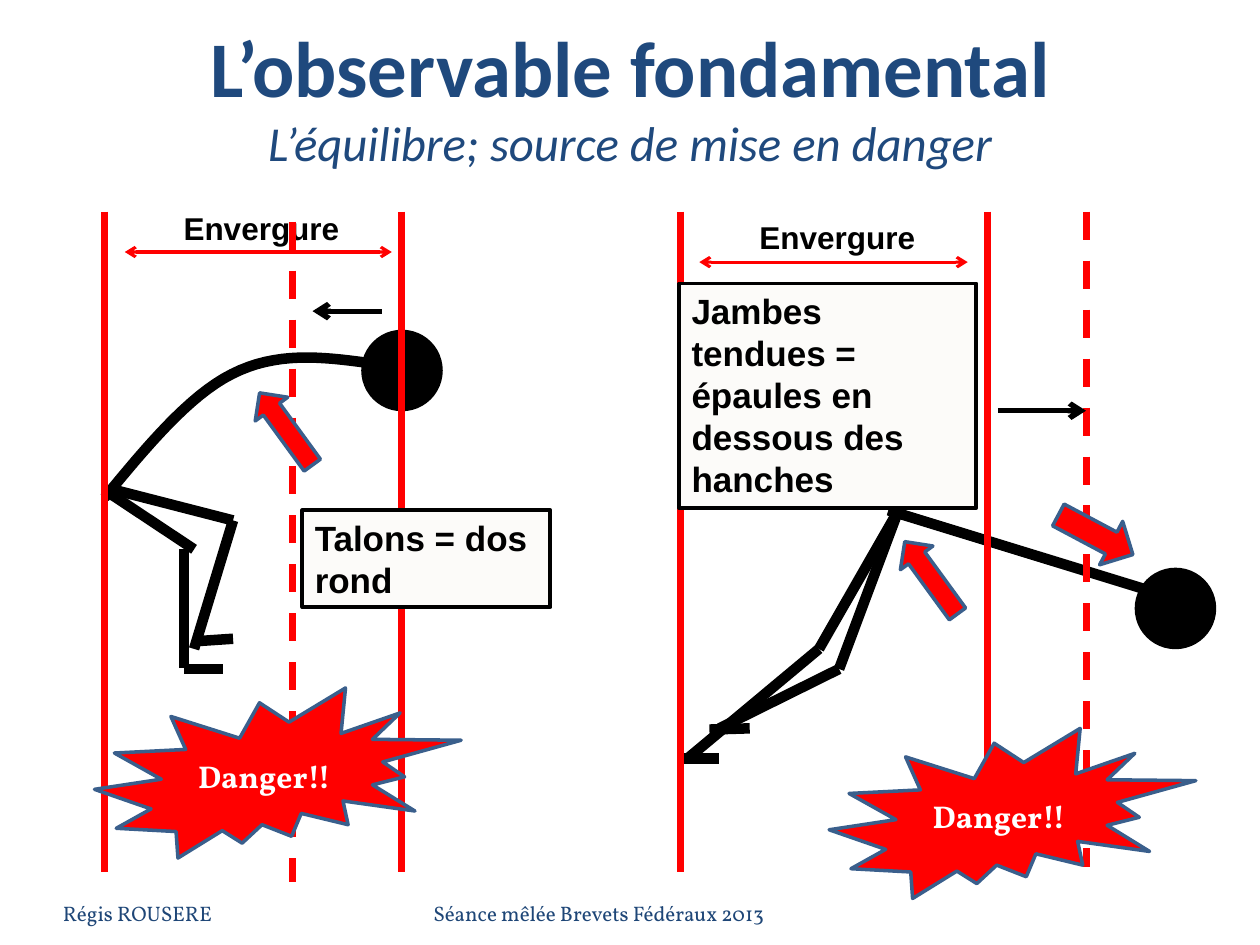
import dataclasses
import typing

import pptx
import pptx.dml.color
import pptx.enum.dml
import pptx.enum.shapes
import pptx.enum.text
import pptx.oxml
import pptx.oxml.ns
import pptx.util

Pt = pptx.util.Pt
RGB = pptx.dml.color.RGBColor.from_string
MSO = pptx.enum.shapes.MSO_SHAPE
ALIGN = pptx.enum.text.PP_ALIGN
ANCHOR = pptx.enum.text.MSO_ANCHOR
Point = tuple[float, float]


@dataclasses.dataclass(frozen=True)
class Theme:
    heading: str = "Calibri"
    label: str = "Arial"
    body: str = "Vollkorn"
    navy: str = "1F497D"
    footer: str = "1E4677"
    black: str = "000000"
    white: str = "FFFFFF"
    red: str = "FF0000"
    edge: str = "3A5F8C"
    paper: str = "FCFBF9"
    title_size: float = 45
    subtitle_size: float = 27.9
    note_size: float = 20
    label_size: float = 18
    footer_size: float = 12


T = Theme()


class Box(typing.NamedTuple):
    x: float
    y: float
    w: float
    h: float


@dataclasses.dataclass(frozen=True)
class Stroke:
    color: str
    width: float
    dashed: bool = False
    ends: tuple[str, ...] = ()


@dataclasses.dataclass(frozen=True)
class Label:
    text: str
    size: float
    font: str
    color: str
    bold: bool = False
    align: ALIGN = ALIGN.LEFT
    anchor: ANCHOR = ANCHOR.TOP


@dataclasses.dataclass(frozen=True)
class Figure:
    limbs: tuple[tuple[Point, Point], ...]
    head: Box
    limits: tuple[float, float]
    span: tuple[float, float, float]
    label: Box
    gravity: tuple[float, float, float]
    push: tuple[float, float, float]
    arrows: tuple[tuple[Box, float], ...]
    note: Box
    note_text: str
    danger: Box


LIMB = Stroke(T.black, 6)
LIMIT = Stroke(T.red, 4)
GRAVITY = Stroke(T.red, 4, dashed=True)
SPAN = Stroke(T.red, 1.75, ends=("headEnd", "tailEnd"))
PUSH = Stroke(T.black, 3, ends=("tailEnd",))
TOP, BOTTOM = 121, 498.2
SPINE = (
    ((59.8, 284.4), (83.5, 255.6), (108, 226.1), (132.5, 213.8)),
    ((132.5, 213.8), (157.7, 200.9), (183.6, 203.8), (210.2, 207.4)),
)

FIGURES = (
    Figure(
        limbs=(
            ((65.5, 280), (133.2, 297.4)), ((133.2, 297.4), (110.9, 370.8)),
            ((105.1, 382.3), (127.4, 382.3)), ((59.8, 280), (110.9, 313.9)),
            ((105.1, 313.9), (105.1, 381.6)), ((110.9, 366.5), (133.2, 365)),
        ),
        head=Box(207.4, 189.4, 44.6, 44.6),
        limits=(59.8, 229.7),
        span=(71.3, 223.9, 144),
        label=Box(76.3, 115.9, 146.2, 28.8),
        gravity=(167, 126.7, 504),
        push=(218.2, 178.6, 177.8),
        arrows=((Box(151.9, 219.6, 23, 51.1), 323.9),),
        note=Box(172.8, 291.6, 141.8, 55.4),
        note_text="Talons = dos rond",
        danger=Box(54, 393.1, 209.5, 97.2),
    ),
    Figure(
        limbs=(
            ((479.5, 382.3), (411.1, 416.2)), ((513.4, 291.6), (479.5, 382.3)),
            ((388.8, 433.4), (411.1, 433.4)), ((468, 370.8), (513.4, 291.6)),
            ((468, 370.8), (393.8, 432.7)), ((405.4, 416.9), (428.4, 416.2)),
            ((507.6, 291.6), (655.2, 337)),
        ),
        head=Box(649.4, 325.4, 44.6, 44.6),
        limits=(388.8, 564.5),
        span=(399.6, 553, 149.8),
        label=Box(405.4, 121, 146.2, 28.8),
        gravity=(620.6, 121, 495.4),
        push=(570.2, 620.6, 234.7),
        arrows=((Box(520.6, 304.6, 23, 51.1), 323.9), (Box(612, 281.5, 28.1, 48.2), 118)),
        note=Box(388.1, 162, 169.9, 128.2),
        note_text="Jambes tendues = épaules en dessous des hanches",
        danger=Box(473.8, 416.2, 209.5, 97.2),
    ),
)


def write(shape, label: Label, inset: typing.Optional[float] = None) -> None:
    tf = shape.text_frame
    tf.word_wrap = True
    tf.vertical_anchor = label.anchor
    if inset is not None:
        tf.margin_left = tf.margin_right = tf.margin_top = tf.margin_bottom = Pt(inset)
    p = tf.paragraphs[0]
    p.text = label.text
    p.alignment = label.align
    p.font.size, p.font.name, p.font.bold = Pt(label.size), label.font, label.bold
    p.font.color.rgb = RGB(label.color)


def add_text(s, box: Box, label: Label, inset: typing.Optional[float] = None) -> None:
    write(s.shapes.add_textbox(*map(Pt, box)), label, inset)


def add_shape(s, kind: MSO, box: Box, fill: str, line: str, width: float = 2, rotation: float = 0):
    sp = s.shapes.add_shape(kind, *map(Pt, box))
    sp.shadow.inherit = False
    sp.fill.solid()
    sp.fill.fore_color.rgb = RGB(fill)
    sp.line.color.rgb = RGB(line)
    sp.line.width = Pt(width)
    sp.rotation = rotation
    return sp


def add_line(s, start: Point, end: Point, stroke: Stroke) -> None:
    c = s.shapes.add_connector(pptx.enum.shapes.MSO_CONNECTOR.STRAIGHT, *map(Pt, start + end))
    c.line.color.rgb = RGB(stroke.color)
    c.line.width = Pt(stroke.width)
    if stroke.dashed:
        c.line.dash_style = pptx.enum.dml.MSO_LINE.DASH
    ln = c.line._get_or_add_ln()
    for tag in stroke.ends:
        arrow = pptx.oxml.parse_xml(f'<a:{tag} {pptx.oxml.ns.nsdecls("a")} type="arrow"/>')
        ln.append(arrow)
    c._element.spPr.append(pptx.oxml.parse_xml(f'<a:effectLst {pptx.oxml.ns.nsdecls("a")}/>'))


def bezier(curve: tuple[Point, ...], t: float) -> Point:
    weights = ((1 - t) ** 3, 3 * t * (1 - t) ** 2, 3 * t * t * (1 - t), t ** 3)
    return tuple(Pt(sum(w * pt[axis] for w, pt in zip(weights, curve))) for axis in (0, 1))


def add_spine(s, steps: int = 16) -> None:
    points = [bezier(curve, i / steps) for curve in SPINE for i in range(1, steps + 1)]
    builder = s.shapes.build_freeform(*map(Pt, SPINE[0][0]))
    builder.add_line_segments(points, close=False)
    sp = builder.convert_to_shape()
    sp.shadow.inherit = False
    sp.fill.background()
    sp.line.color.rgb = RGB(LIMB.color)
    sp.line.width = Pt(LIMB.width)


def add_figure(s, f: Figure) -> None:
    add_shape(s, MSO.OVAL, f.head, T.black, T.black)
    for start, end in f.limbs:
        add_line(s, start, end, LIMB)
    add_text(s, f.label, Label("Envergure", T.label_size, T.label, T.black, True, ALIGN.CENTER))
    for x in f.limits:
        add_line(s, (x, TOP), (x, BOTTOM), LIMIT)
    left, right, y = f.span
    add_line(s, (left, y), (right, y), SPAN)
    x, top, bottom = f.gravity
    add_line(s, (x, top), (x, bottom), GRAVITY)
    start, end, y = f.push
    add_line(s, (start, y), (end, y), PUSH)
    for box, rotation in f.arrows:
        add_shape(s, MSO.UP_ARROW, box, T.red, T.edge, rotation=rotation)
    note = add_shape(s, MSO.RECTANGLE, f.note, T.paper, T.black, 2.25)
    write(note, Label(f.note_text, T.note_size, T.label, T.black, True))
    danger = add_shape(s, MSO.EXPLOSION2, f.danger, T.red, T.edge)
    label = Label("Danger!!", T.label_size, T.body, T.white, True, ALIGN.CENTER, ANCHOR.MIDDLE)
    write(danger, label, 0)


def add_title(s) -> None:
    sp = s.shapes.title
    sp.left, sp.top, sp.width, sp.height = map(Pt, Box(36, 0, 648, 98))
    tf = sp.text_frame
    tf.auto_size = pptx.enum.text.MSO_AUTO_SIZE.NONE
    tf.vertical_anchor = ANCHOR.BOTTOM
    tf.margin_left = tf.margin_right = tf.margin_bottom = 0
    p = tf.paragraphs[0]
    p.alignment = ALIGN.CENTER
    p.font.name = T.heading
    p.font.color.rgb = RGB(T.navy)
    r = p.add_run()
    r.text, r.font.size, r.font.bold = "L’observable fondamental", Pt(T.title_size), True
    p.add_line_break()
    r = p.add_run()
    r.text, r.font.size, r.font.italic = "L’équilibre; source de mise en danger", Pt(T.subtitle_size), True


def main() -> None:
    prs = pptx.Presentation()
    prs.slide_width, prs.slide_height = Pt(720), Pt(540)
    s = prs.slides.add_slide(prs.slide_layouts[5])
    add_title(s)
    add_spine(s)
    for f in FIGURES:
        add_figure(s, f)
    for box, text, align in (
        (Box(36, 500.4, 167.8, 28.8), "Régis ROUSERE", ALIGN.LEFT),
        (Box(210.2, 500.4, 264.2, 28.8), "Séance mêlée Brevets Fédéraux 2013", ALIGN.CENTER),
    ):
        label = Label(text, T.footer_size, T.body, T.footer, align=align, anchor=ANCHOR.BOTTOM)
        add_text(s, box, label, 0)
    prs.save("out.pptx")


if __name__ == "__main__":
    main()
